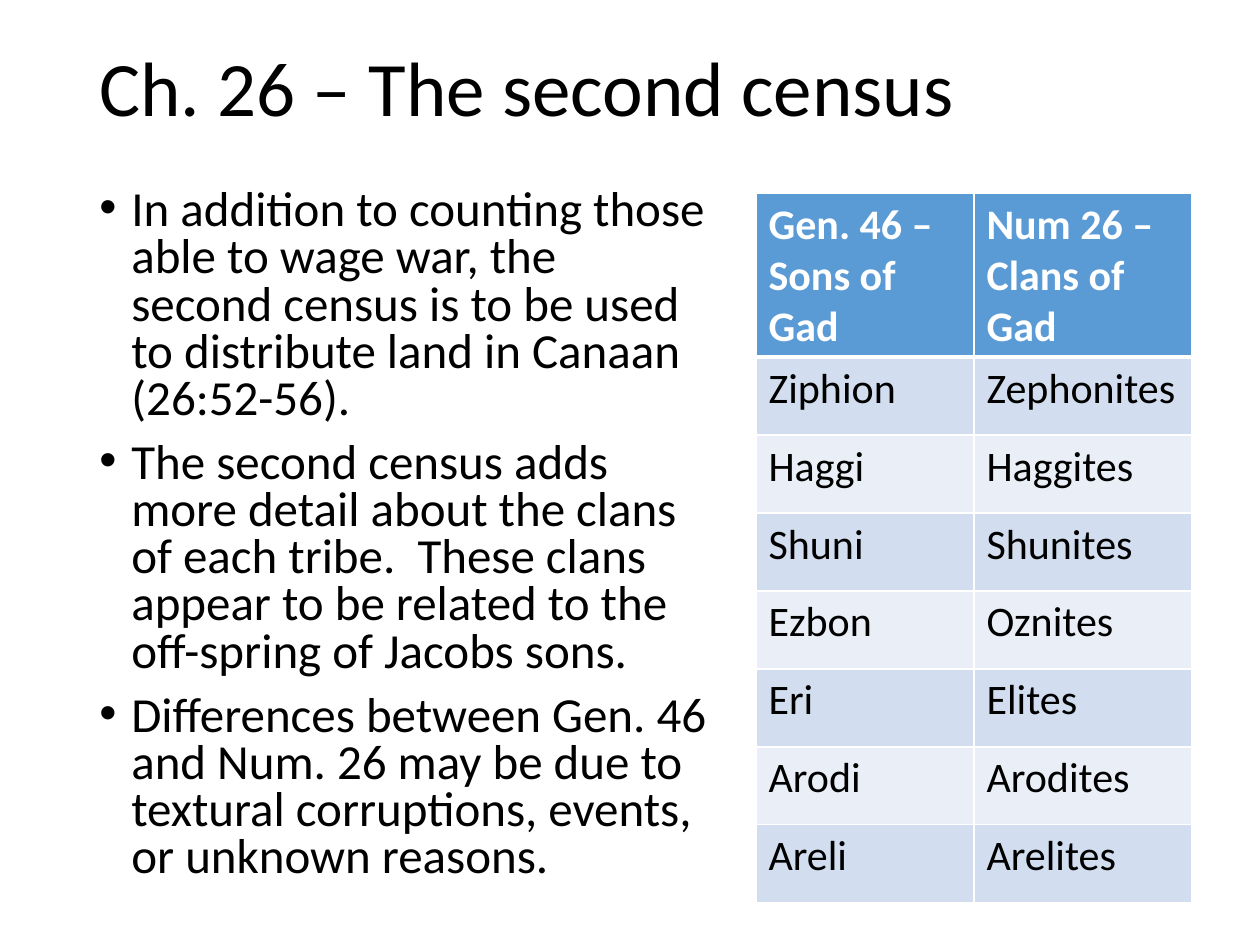
from lxml import etree
from pptx import Presentation
from pptx.dml.color import RGBColor
from pptx.enum.text import MSO_ANCHOR
from pptx.oxml.ns import qn
from pptx.util import Pt

MIDDLE, TOP = MSO_ANCHOR.MIDDLE, MSO_ANCHOR.TOP
PX = 914400 // 126
FONT = "Calibri"
COLORS = {"text": "000000", "white": "FFFFFF", "header": "5B9BD5",
          "odd": "D2DEEF", "even": "EAEFF7"}

# Content
TITLE = "Ch. 26 – The second census"
BULLETS = [
    "In addition to counting those able to wage war, the second census is to be "
    "used to distribute land in Canaan (26:52-56).",
    "The second census adds more detail about the clans of each tribe.  These "
    "clans appear to be related to the off-spring of Jacobs sons.",
    "Differences between Gen. 46 and Num. 26 may be due to textural corruptions, "
    "events, or unknown reasons.",
]
CLANS = [
    ("Gen. 46 – Sons of Gad", "Num 26 – Clans of Gad"),
    ("Ziphion", "Zephonites"),
    ("Haggi", "Haggites"),
    ("Shuni", "Shunites"),
    ("Ezbon", "Oznites"),
    ("Eri", "Elites"),
    ("Arodi", "Arodites"),
    ("Areli", "Arelites"),
]

# Layout in px
SLIDE = (1260, 945)
TITLE_BOX = (87, 0, 1086, 183)
BODY_BOX = (87, 183, 633, 737)
TABLE_LEFT, TABLE_TOP, COL_W = 756, 193, 218
HEADER_H, ROW_H = 156, 78
INDENT = 32


def px(*values):
    return [v * PX for v in values]


def write(p, text, size, color="text", bold=False, spacing=None, before=0, bullet=False):
    r = p.add_run()
    r.text = text
    r.font.name, r.font.size, r.font.bold = FONT, Pt(size), bold
    r.font.color.rgb = RGBColor.from_string(COLORS[color])
    p.space_before = Pt(before)
    if spacing:
        p.line_spacing = spacing
    if bullet:
        pPr = p._p.get_or_add_pPr()
        pPr.set("marL", str(INDENT * PX))
        pPr.set("indent", str(-INDENT * PX))
        etree.SubElement(pPr, qn("a:buFont"), typeface="Arial")
        etree.SubElement(pPr, qn("a:buChar"), char="•")


def add_text_frame(s, box, anchor):
    tf = s.shapes.add_textbox(*px(*box)).text_frame
    tf.word_wrap = True
    tf.vertical_anchor = anchor
    return tf


def set_borders(cell, **widths):
    tcPr = cell._tc.get_or_add_tcPr()
    for i, side in enumerate("LRTB"):
        ln = etree.Element(qn(f"a:ln{side}"), w=str(Pt(widths.get(side, 1))))
        fill = etree.SubElement(ln, qn("a:solidFill"))
        etree.SubElement(fill, qn("a:srgbClr"), val=COLORS["white"])
        tcPr.insert(i, ln)


prs = Presentation()
prs.slide_width, prs.slide_height = px(*SLIDE)
s = prs.slides.add_slide(prs.slide_layouts[6])

# Title
tf = add_text_frame(s, TITLE_BOX, MIDDLE)
write(tf.paragraphs[0], TITLE, 44, spacing=0.9)

# Bullets
tf = add_text_frame(s, BODY_BOX, TOP)
for i, text in enumerate(BULLETS):
    p = tf.add_paragraph() if i else tf.paragraphs[0]
    write(p, text, 28, spacing=0.8, before=10, bullet=True)

# Clan table
n_rows, n_cols = len(CLANS), len(CLANS[0])
table = s.shapes.add_table(n_rows, n_cols, *px(
    TABLE_LEFT, TABLE_TOP, n_cols * COL_W, HEADER_H + (n_rows - 1) * ROW_H)).table
for col in table.columns:
    col.width = COL_W * PX
for i, names in enumerate(CLANS):
    header = i == 0
    table.rows[i].height = (HEADER_H if header else ROW_H) * PX
    band = "header" if header else "odd" if i % 2 else "even"
    for j, name in enumerate(names):
        cell = table.cell(i, j)
        cell.fill.solid()
        cell.fill.fore_color.rgb = RGBColor.from_string(COLORS[band])
        set_borders(cell, B=3 if header else 1, T=3 if i == 1 else 1)
        write(cell.text_frame.paragraphs[0], name, 24,
              color="white" if header else "text", bold=header)

prs.save("out.pptx")
